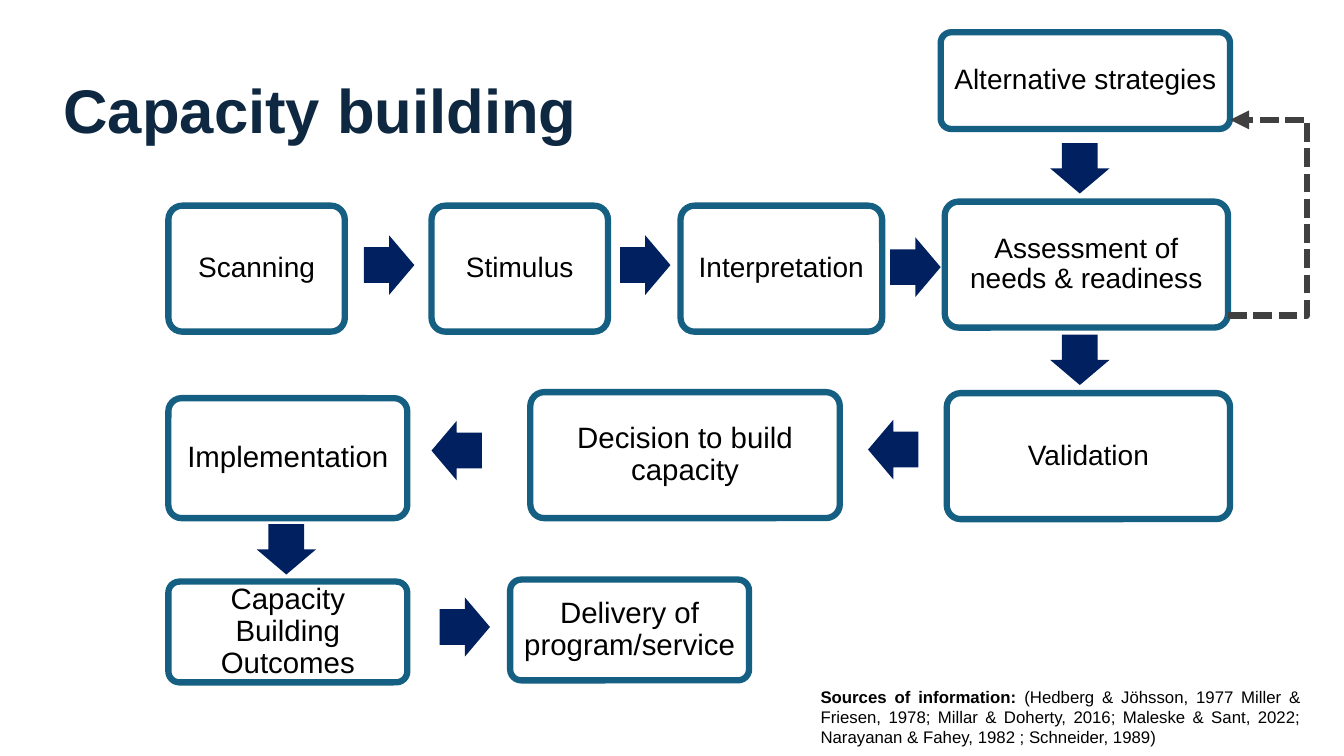
import pptx
import pptx.util
import pptx.dml.color
import pptx.enum.dml
import pptx.enum.shapes
import pptx.enum.text
import pptx.oxml

Inches = pptx.util.Inches
Shapes = pptx.enum.shapes.MSO_SHAPE
Align = pptx.enum.text.PP_ALIGN
Anchor = pptx.enum.text.MSO_ANCHOR

SLIDE_SIZE = (13.33, 7.5)
TITLE_BOX = (0.53, 0.4, 12.47, 1.45)
FLOW_BOX = (1.67, 0.32, 10.53, 6.45)
SOURCES_BOX = (8.04, 6.76, 4.96, 0.71)
ARROW_LENGTH, ARROW_BREADTH = 0.5, 0.59
LOOP_REACH = 0.78

STEPS = [
    ("Alternative strategies", 20, 7.66, 0, 2.87, 0.96),
    ("Scanning", 20, 0, 1.72, 1.75, 1.25),
    ("Stimulus", 20, 2.61, 1.72, 1.75, 1.25),
    ("Interpretation", 20, 5.08, 1.72, 2, 1.25),
    ("Assessment of needs & readiness", 20, 7.7, 1.68, 2.81, 1.25),
    ("Validation", 20, 7.72, 3.58, 2.81, 1.25),
    ("Decision to build capacity", 21, 3.59, 3.57, 3.07, 1.25),
    ("Implementation", 21, 0, 3.63, 2.37, 1.19),
    ("Capacity Building Outcomes", 21, 0, 5.45, 2.37, 1),
    ("Delivery of program/service", 21, 3.39, 5.43, 2.37, 1),
]
ARROWS = {
    Shapes.RIGHT_ARROW: [(2.19, 2.31), (4.73, 2.31), (7.41, 2.33), (2.94, 5.9)],
    Shapes.DOWN_ARROW: [(9.04, 1.35), (9.04, 3.25), (1.17, 5.13)],
    Shapes.LEFT_ARROW: [(7.19, 4.14), (2.86, 4.15)],
}
LOOP_START, LOOP_END = (10.51, 2.81), (10.53, 0.87)
SOURCES = [
    ("Sources of information: ", True),
    ("(Hedberg & Jöhsson, 1977 Miller & Friesen, 1978; Millar & Doherty, 2016; "
     "Maleske & Sant, 2022; Narayanan & Fahey, 1982 ; Schneider, 1989)", False),
]


def colour(value):
    """Turn a hex string into a colour."""
    return pptx.dml.color.RGBColor.from_string(value)


def apply_format(target, values):
    """Set each named attribute on the target."""
    for name, value in values.items():
        setattr(target, name, value)


def add_span(para, text, size, hue="000000", bold=False):
    """Append formatted text to a paragraph."""
    span = para.add_run()
    apply_format(span, {"text": text})
    apply_format(span.font, {"name": "Arial", "size": pptx.util.Pt(size), "bold": bold})
    span.font.color.rgb = colour(hue)


def add_filled(slide, kind, box, fill):
    """Add a flat preset shape with a solid fill."""
    shape = slide.shapes.add_shape(kind, *map(Inches, box))
    shape.shadow.inherit = False
    shape.fill.solid()
    shape.fill.fore_color.rgb = colour(fill)
    return shape


def add_step(slide, text, size, box):
    """Draw one outlined step with centred text."""
    step = add_filled(slide, Shapes.ROUNDED_RECTANGLE, box, "FFFFFF")
    step.adjustments[0] = 0.11
    step.line.color.rgb = colour("156082")
    step.line.width = pptx.util.Pt(4.5)
    frame = step.text_frame
    inset = Inches(0.08)
    apply_format(frame, {"word_wrap": True, "vertical_anchor": Anchor.MIDDLE,
                         "margin_left": inset, "margin_right": inset,
                         "margin_top": inset, "margin_bottom": inset})
    para = frame.paragraphs[0]
    apply_format(para, {"alignment": Align.CENTER, "line_spacing": 0.9})
    add_span(para, text, size)


def add_arrow(slide, kind, centre_x, centre_y):
    """Draw a block arrow around its centre."""
    width, height = ARROW_LENGTH, ARROW_BREADTH
    if kind == Shapes.DOWN_ARROW:
        width, height = height, width
    box = (centre_x - width / 2, centre_y - height / 2, width, height)
    arrow = add_filled(slide, kind, box, "002060")
    arrow.line.fill.background()
    arrow.adjustments[0] = 0.6
    arrow.adjustments[1] = 0.5


def add_loop(slide, start, end):
    """Draw the dashed feedback arrow that bends out to the right."""
    loop = slide.shapes.add_connector(
        pptx.enum.shapes.MSO_CONNECTOR.ELBOW, *map(Inches, start + end))
    apply_format(loop.line, {"width": pptx.util.Pt(4.5),
                             "dash_style": pptx.enum.dml.MSO_LINE.SQUARE_DOT})
    loop.line.color.rgb = colour("404040")
    namespace = pptx.oxml.ns.nsdecls("a")
    properties = loop.element.spPr
    properties.find(pptx.oxml.ns.qn("a:ln")).append(
        pptx.oxml.parse_xml(f'<a:tailEnd {namespace} type="triangle"/>'))
    properties.append(pptx.oxml.parse_xml(f"<a:effectLst {namespace}/>"))
    bend = round(LOOP_REACH / (end[0] - start[0]) * 100000)
    guides = properties.find(pptx.oxml.ns.qn("a:prstGeom")).get_or_add_avLst()
    guides.append(pptx.oxml.parse_xml(
        f'<a:gd {namespace} name="adj1" fmla="val {bend}"/>'))


def add_title(slide, box):
    """Place the slide title."""
    title = slide.shapes.title
    apply_format(title, dict(zip(("left", "top", "width", "height"), map(Inches, box))))
    title.text_frame.vertical_anchor = Anchor.MIDDLE
    para = title.text_frame.paragraphs[0]
    apply_format(para, {"alignment": Align.LEFT, "line_spacing": 0.9})
    add_span(para, "Capacity building", 44, "0E2841", True)


def add_flow(slide, box):
    """Place the arrows, steps and feedback loop inside the box."""
    left, top = box[:2]
    for kind, centres in ARROWS.items():
        for column, row in centres:
            add_arrow(slide, kind, left + column, top + row)
    for text, size, column, row, width, height in STEPS:
        add_step(slide, text, size, (left + column, top + row, width, height))
    start, end = ((left + column, top + row) for column, row in (LOOP_START, LOOP_END))
    add_loop(slide, start, end)


def add_sources(slide, box):
    """Place the justified list of sources."""
    frame = slide.shapes.add_textbox(*map(Inches, box)).text_frame
    frame.word_wrap = True
    para = frame.paragraphs[0]
    para.alignment = Align.JUSTIFY
    for text, bold in SOURCES:
        add_span(para, text, 12, bold=bold)


def main():
    """Build and save the deck."""
    deck = pptx.Presentation()
    deck.slide_width, deck.slide_height = map(Inches, SLIDE_SIZE)
    slide = deck.slides.add_slide(deck.slide_layouts.get_by_name("Title Only"))
    add_title(slide, TITLE_BOX)
    add_flow(slide, FLOW_BOX)
    add_sources(slide, SOURCES_BOX)
    deck.save("out.pptx")


if __name__ == "__main__":
    main()
